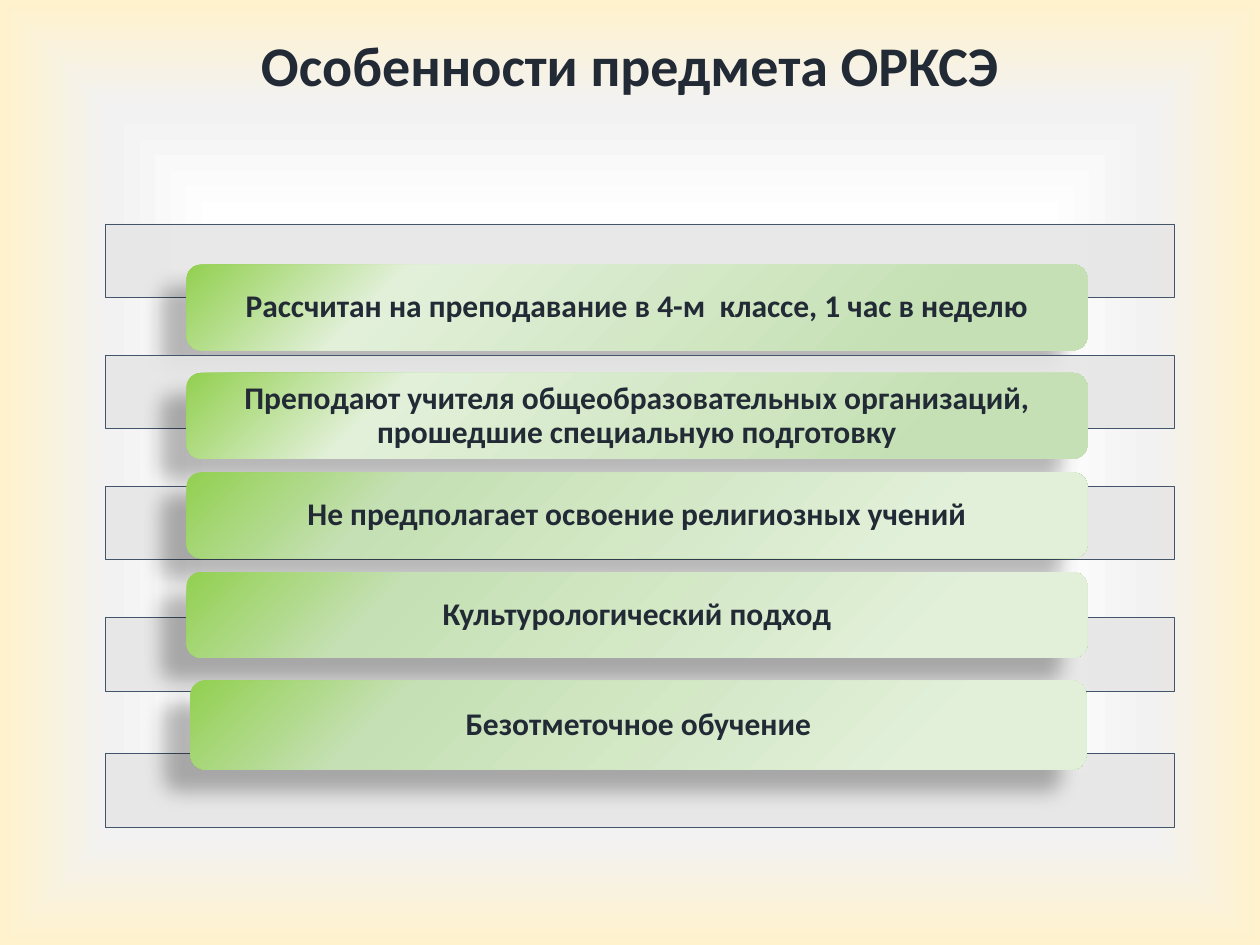
from pptx import Presentation
from pptx.dml.color import RGBColor
from pptx.enum.shapes import MSO_SHAPE
from pptx.enum.text import MSO_ANCHOR, PP_ALIGN
from pptx.oxml import parse_xml
from pptx.oxml.ns import nsdecls, qn
from pptx.util import Pt

INK = "222A35"
GREENS_MIDDLE = [(18, "C5E0B4"), (77, "E2F0D9"), (100, "92D050")]
GREENS_PALE = [(18, "E2F0D9"), (77, "C5E0B4"), (100, "92D050")]
BACKGROUND = [(54, "FFFFFF"), (77, "F2F2F2"), (100, "FFF2CC")]
BAND_TOPS = [128 + 75 * row for row in range(4)] + [430.6]
CARDS = [
    ("Рассчитан на преподавание в 4-м  классе, 1 час в неделю",
     (106.6, 151.2, 514.8, 49), GREENS_MIDDLE),
    ("Преподают учителя общеобразовательных организаций, прошедшие специальную подготовку",
     (106.6, 213.1, 514.8, 49), GREENS_MIDDLE),
    ("Не предполагает освоение религиозных учений",
     (106.6, 270, 514.8, 49), GREENS_PALE),
    ("Культурологический подход",
     (106.6, 326.9, 514.8, 49), GREENS_PALE),
    ("Безотметочное обучение",
     (108.8, 388.8, 512, 51), GREENS_PALE),
]


def color(value):
    """Turn a hex string into a colour."""
    return RGBColor.from_string(value)


def set_gradient(holder, stops, path_kind, focus):
    """Replace the solid fill of a properties element with a path gradient."""
    stop_xml = "".join(
        f'<a:gs pos="{position * 1000}"><a:srgbClr val="{value}"/></a:gs>'
        for position, value in stops)
    left, top, right, bottom = (side * 1000 for side in focus)
    gradient = parse_xml(
        f'<a:gradFill {nsdecls("a")} rotWithShape="1"><a:gsLst>{stop_xml}</a:gsLst>'
        f'<a:path path="{path_kind}"><a:fillToRect l="{left}" t="{top}" '
        f'r="{right}" b="{bottom}"/></a:path></a:gradFill>')
    holder.replace(holder.find(qn("a:solidFill")), gradient)


def add_shadow(shape):
    """Cast a soft black shadow down and to the left."""
    shape.shadow.inherit = False
    effects = shape._element.spPr.find(qn("a:effectLst"))
    effects.append(parse_xml(
        f'<a:outerShdw {nsdecls("a")} blurRad="{Pt(11.8)}" dist="{Pt(19.7)}" '
        f'dir="{141 * 60000}" rotWithShape="0"><a:srgbClr val="000000">'
        '<a:alpha val="28000"/></a:srgbClr></a:outerShdw>'))


def write_text(box, text, size, margins):
    """Write one centred bold paragraph into a box."""
    frame = box.text_frame
    frame.word_wrap = True
    frame.vertical_anchor = MSO_ANCHOR.MIDDLE
    (frame.margin_left, frame.margin_top,
     frame.margin_right, frame.margin_bottom) = map(Pt, margins)
    frame.text = text
    paragraph = frame.paragraphs[0]
    paragraph.alignment = PP_ALIGN.CENTER
    paragraph.line_spacing = 0.9
    for span in paragraph.runs:
        span.font.name = "Calibri"
        span.font.size = Pt(size)
        span.font.bold = True
        span.font.color.rgb = color(INK)


def paint_background(page):
    """Fill the page with a gradient that grows from its centre."""
    page.background.fill.solid()
    holder = page._element.xpath(".//p:bgPr")[0]
    set_gradient(holder, BACKGROUND, "shape", (50, 50, 50, 50))


def add_title(page, text):
    """Add the heading above the middle of its box."""
    box = page.shapes.add_textbox(Pt(0), Pt(0), Pt(720), Pt(112))
    write_text(box, text, 32, (7.2, 3.6, 7.2, 38))


def add_band(page, top):
    """Add one thin-lined, slightly transparent grey band."""
    band = page.shapes.add_shape(
        MSO_SHAPE.RECTANGLE, Pt(60), Pt(top), Pt(611), Pt(42))
    band.shadow.inherit = False
    band.fill.solid()
    band.fill.fore_color.rgb = color("E7E6E6")
    fill_color = band._element.spPr.find(qn("a:solidFill"))[0]
    fill_color.append(parse_xml(f'<a:alpha {nsdecls("a")} val="90000"/>'))
    band.line.color.rgb = color("44546A")
    band.line.width = Pt(0.5)


def add_card(page, text, bounds, stops):
    """Add one rounded green card with its text."""
    card = page.shapes.add_shape(MSO_SHAPE.ROUNDED_RECTANGLE, *map(Pt, bounds))
    card.fill.solid()
    set_gradient(card._element.spPr, stops, "circle", (100, 100, 0, 0))
    card.line.fill.background()
    add_shadow(card)
    write_text(card, text, 18, (16, 0, 16, 0))


def main():
    """Build the slide and save it."""
    deck = Presentation()
    deck.slide_width, deck.slide_height = Pt(720), Pt(540)
    page = deck.slides.add_slide(deck.slide_layouts[6])
    paint_background(page)
    add_title(page, "Особенности предмета ОРКСЭ")
    for top, card in zip(BAND_TOPS, CARDS):
        add_band(page, top)
        add_card(page, *card)
    deck.save("out.pptx")


if __name__ == "__main__":
    main()
